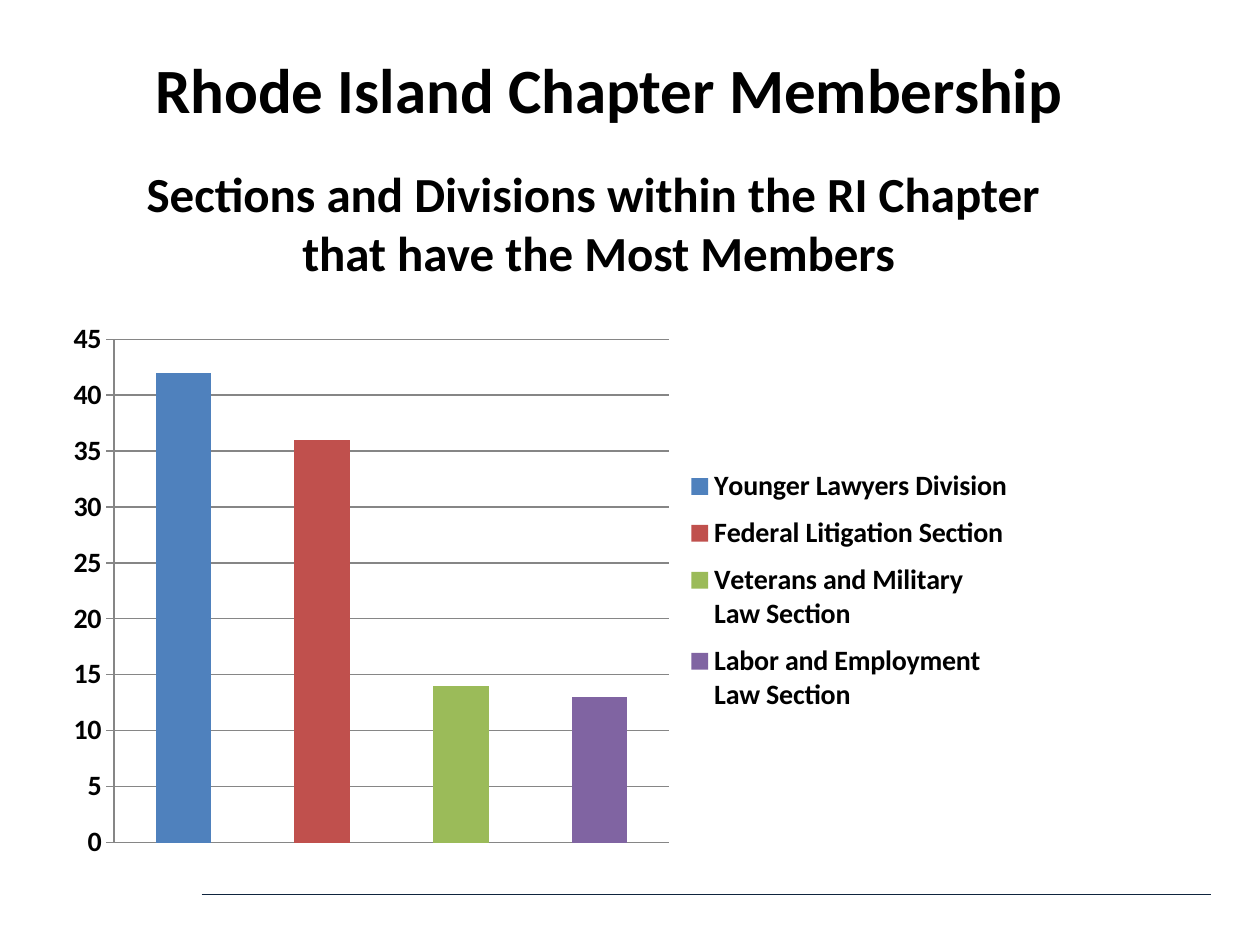
"""Build the Rhode Island chapter membership slide."""
from lxml.etree import SubElement
from pptx import Presentation
from pptx.chart.data import CategoryChartData
from pptx.dml.color import RGBColor
from pptx.enum.chart import XL_CHART_TYPE, XL_LEGEND_POSITION, XL_TICK_MARK
from pptx.enum.shapes import MSO_CONNECTOR
from pptx.enum.text import MSO_AUTO_SIZE, PP_ALIGN
from pptx.oxml import parse_xml
from pptx.oxml.ns import nsdecls, qn
from pptx.util import Inches, Pt

FONT = "Calibri"
COLORS = {"text": "000000", "rule": "0F243E", "grid": "868686"}
TITLE = "Rhode Island Chapter Membership"
SUBTITLE = "Sections and Divisions within the RI Chapter \nthat have the Most Members"
MEMBERS = [
    ("Younger Lawyers Division", 42, "4F81BD"),
    ("Federal Litigation Section", 36, "C0504D"),
    ("Veterans and Military Law Section", 14, "9BBB59"),
    ("Labor and Employment Law Section", 13, "8064A2"),
]
PLOT_AREA = {"x": 0.06, "y": 0.05, "w": 0.57, "h": 0.9}
LEGEND_AREA = {"x": 0.65, "y": 0.26, "w": 0.33, "h": 0.48}


def style_font(font, size, bold=True):
    font.name = FONT
    font.size = Pt(size)
    font.bold = bold
    font.color.rgb = RGBColor.from_string(COLORS["text"])


def add_heading(page, text, *, at, size):
    box = page.shapes.add_textbox(*map(Inches, at))
    frame = box.text_frame
    frame.word_wrap = True
    frame.auto_size = MSO_AUTO_SIZE.SHAPE_TO_FIT_TEXT
    para = frame.paragraphs[0]
    para.text = text
    para.alignment = PP_ALIGN.CENTER
    for span in para.runs:
        style_font(span.font, size)


def style_line(line, color, width=0.75):
    line.color.rgb = RGBColor.from_string(COLORS[color])
    line.width = Pt(width)


def make_layout(area, inner=False):
    target = '<c:layoutTarget val="inner"/>' if inner else ""
    modes = "".join(f'<c:{side}Mode val="edge"/>' for side in "xy")
    sizes = "".join(f'<c:{key} val="{value}"/>' for key, value in area.items())
    return parse_xml(
        f"<c:layout {nsdecls('c')}><c:manualLayout>{target}{modes}{sizes}"
        "</c:manualLayout></c:layout>"
    )


def place(parent, layout, index):
    for old in parent.findall(qn("c:layout")):
        parent.remove(old)
    parent.insert(index, layout)


def add_member_chart(page, at):
    names, counts, colors = zip(*MEMBERS)
    data = CategoryChartData()
    data.categories = names
    data.add_series("Series 1", counts)
    chart = page.shapes.add_chart(
        XL_CHART_TYPE.COLUMN_CLUSTERED, *map(Inches, at), data
    ).chart
    style_font(chart.font, 10, bold=False)
    chart.has_title = False

    plot = chart.plots[0]
    plot.vary_by_categories = True
    plot.gap_width = 150
    for index, color in enumerate(colors):
        fill = plot.series[0].points[index].format.fill
        fill.solid()
        fill.fore_color.rgb = RGBColor.from_string(color)

    chart.category_axis.visible = False
    axis = chart.value_axis
    axis.minimum_scale, axis.maximum_scale, axis.major_unit = 0, 45, 5
    axis.major_tick_mark = XL_TICK_MARK.OUTSIDE
    axis.has_major_gridlines = True
    style_font(axis.tick_labels.font, 16)
    for line in (axis.format.line, axis.major_gridlines.format.line):
        style_line(line, "grid")

    chart.has_legend = True
    legend = chart.legend
    legend.position = XL_LEGEND_POSITION.RIGHT
    legend.include_in_layout = False
    style_font(legend.font, 16)
    plot_area = chart.element.find(".//" + qn("c:plotArea"))
    place(plot_area, make_layout(PLOT_AREA, inner=True), 0)
    place(chart.element.find(".//" + qn("c:legend")), make_layout(LEGEND_AREA), 1)


def main():
    deck = Presentation()
    deck.slide_width, deck.slide_height = Inches(10), Inches(7.5)
    page = deck.slides.add_slide(deck.slide_layouts[6])

    rule = page.shapes.add_connector(
        MSO_CONNECTOR.STRAIGHT, Inches(1.6), Inches(7.1), Inches(9.61), Inches(7.1)
    )
    style_line(rule.line, "rule")
    SubElement(rule.element.spPr, qn("a:effectLst"))

    add_heading(page, SUBTITLE, at=(0.67, 1.25, 8.16, 1.04), size=28)
    add_heading(page, TITLE, at=(0.42, 0.35, 8.83, 0.71), size=36)
    add_member_chart(page, at=(0.44, 2.47, 7.73, 4.44))
    deck.save("out.pptx")


if __name__ == "__main__":
    main()
